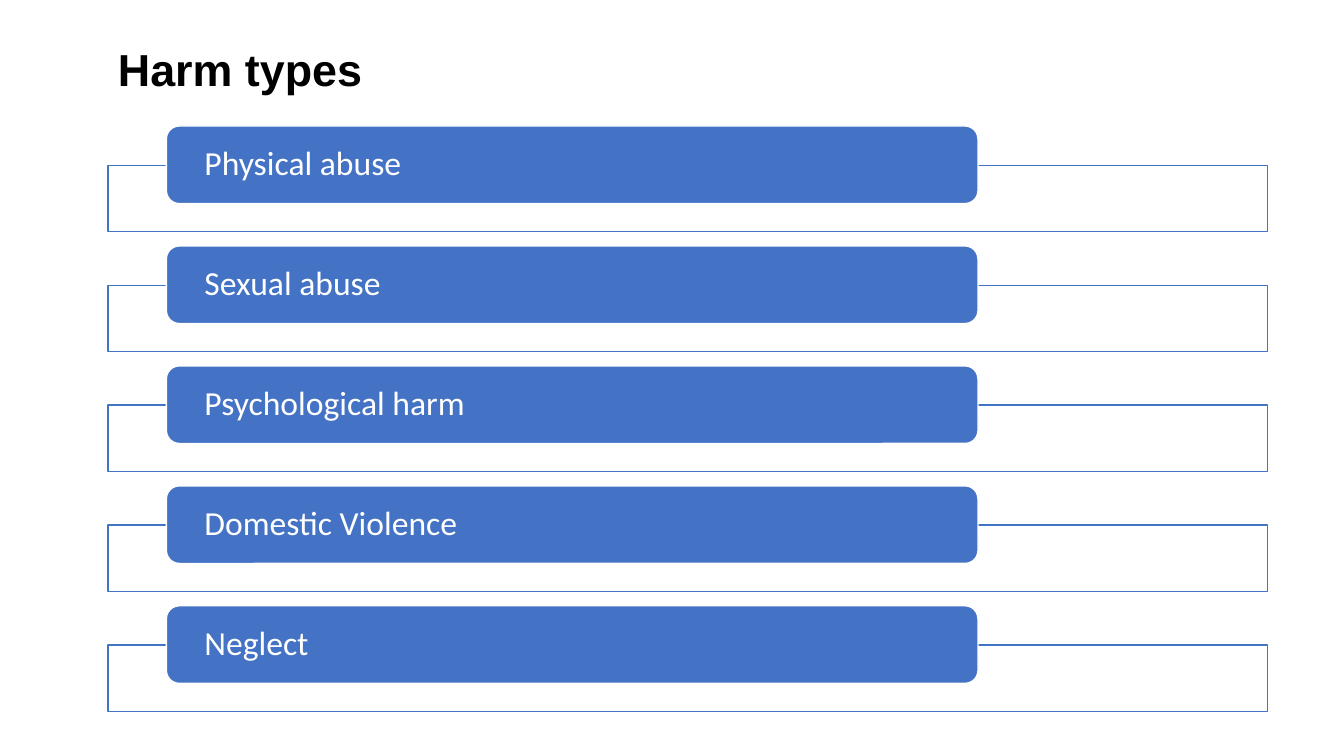
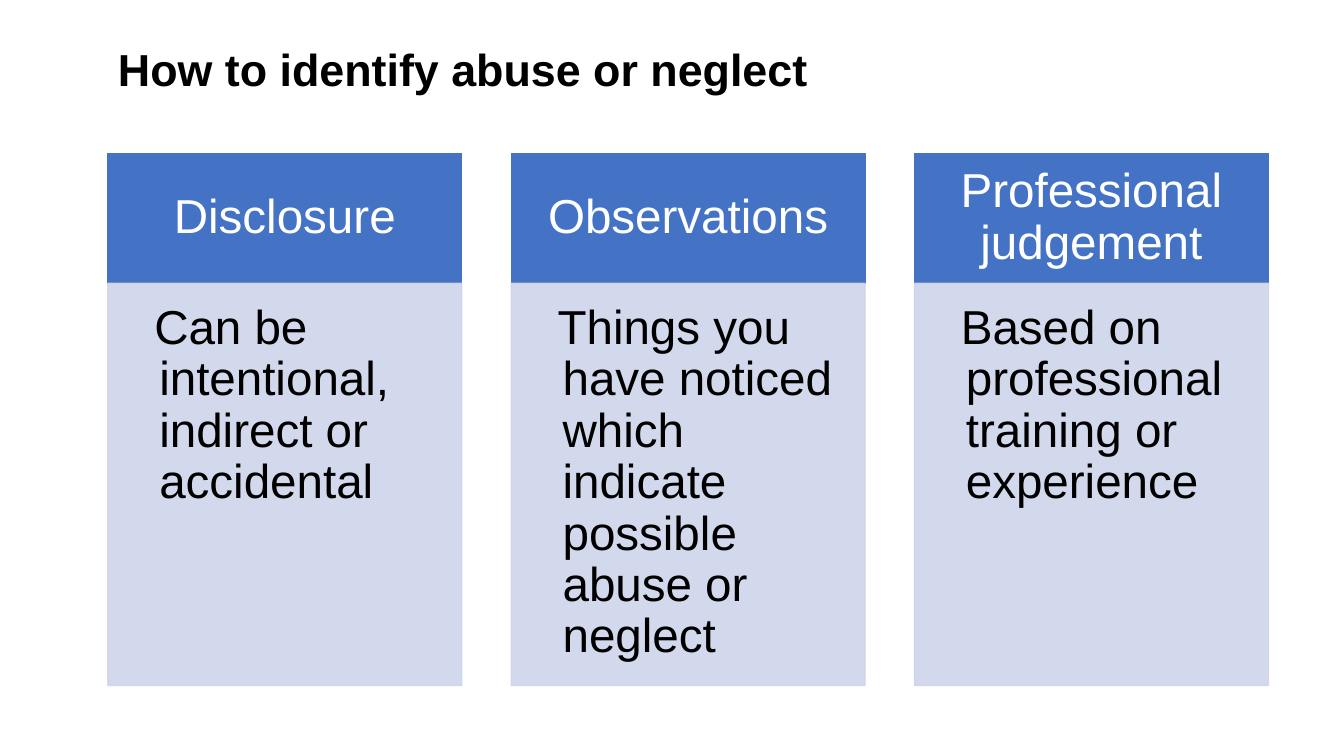
"""Build two slides on types of harm and on identifying abuse or neglect."""
import pptx
import pptx.dml.color
import pptx.enum.shapes
import pptx.enum.text
import pptx.oxml
import pptx.util

PX = 9144
BLUE, LILAC, WHITE, BLACK = "4472C4", "CFD5EA", "FFFFFF", "000000"
SHAPES = pptx.enum.shapes.MSO_SHAPE
ALIGN = pptx.enum.text.PP_ALIGN
ANCHOR = pptx.enum.text.MSO_ANCHOR
rgb = pptx.dml.color.RGBColor.from_string

TITLE = {"size": 32, "name": "Arial", "color": BLACK, "bold": True}
HARM = {"size": 24, "name": "Calibri", "color": WHITE, "bold": False}
HEADING = {"size": 34, "name": "Arial", "color": WHITE, "bold": False}
DETAIL = {**HEADING, "color": BLACK}


def write(shape, text, style, align, anchor, insets):
    frame = shape.text_frame
    sides = ("margin_left", "margin_top", "margin_right", "margin_bottom")
    layout = {"word_wrap": True, "vertical_anchor": anchor,
              "auto_size": pptx.enum.text.MSO_AUTO_SIZE.NONE,
              **{side: inset * PX for side, inset in zip(sides, insets)}}
    for attribute, value in layout.items():
        setattr(frame, attribute, value)
    paragraph = frame.paragraphs[0]
    paragraph.text = text
    paragraph.alignment = align
    paragraph.line_spacing = 0.9
    font = paragraph.runs[0].font
    values = {"size": pptx.util.Pt(style["size"]), "name": style["name"], "bold": style["bold"]}
    for attribute, value in values.items():
        setattr(font, attribute, value)
    font.color.rgb = rgb(style["color"])
    return paragraph


def panel(slide, kind, box, fill, line):
    shape = slide.shapes.add_shape(kind, *(length * PX for length in box))
    shape.shadow.inherit = False
    shape.fill.solid()
    shape.fill.fore_color.rgb = rgb(fill)
    shape.line.color.rgb = rgb(line)
    shape.line.width = pptx.util.Pt(1)
    return shape


deck = pptx.Presentation()
deck.slide_width, deck.slide_height = 1333 * PX, 750 * PX

slides = []
for heading in ("Harm types", "How to identify abuse or neglect"):
    slide = deck.slides.add_slide(deck.slide_layouts[5])
    title = slide.shapes.title
    for attribute, length in {"left": 107, "top": 40, "width": 1150, "height": 63}.items():
        setattr(title, attribute, length * PX)
    write(title, heading, TITLE, ALIGN.LEFT, ANCHOR.MIDDLE, (10, 5, 10, 5))
    slides.append(slide)
harm_slide, identify_slide = slides

harms = ("Physical abuse", "Sexual abuse", "Psychological harm", "Domestic Violence", "Neglect")
for row, harm in enumerate(harms):
    top = 125 + 119 * row
    panel(harm_slide, SHAPES.RECTANGLE, (107, top + 39, 1150, 66), WHITE, BLUE)
    bar = panel(harm_slide, SHAPES.ROUNDED_RECTANGLE, (165, top, 805, 77), BLUE, WHITE)
    write(bar, harm, HARM, ALIGN.LEFT, ANCHOR.MIDDLE, (34, 4, 34, 4))

signs = (
    ("Disclosure", "Can be intentional, indirect or accidental"),
    ("Observations", "Things you have noticed which indicate possible abuse or neglect"),
    ("Professional judgement", "Based on professional training or experience"),
)
for column, (sign, detail) in enumerate(signs):
    left = 107 + 400 * column
    header = panel(identify_slide, SHAPES.RECTANGLE, (left, 152, 351, 129), BLUE, BLUE)
    write(header, sign, HEADING, ALIGN.CENTER, ANCHOR.MIDDLE, (26, 15, 26, 15))
    body = panel(identify_slide, SHAPES.RECTANGLE, (left, 281, 351, 399), LILAC, LILAC)
    for color in body._element.spPr.iter(pptx.oxml.ns.qn("a:srgbClr")):
        alpha = color.makeelement(pptx.oxml.ns.qn("a:alpha"), {"val": "90000"})
        color.append(alpha)
    paragraph = write(body, detail, DETAIL, ALIGN.LEFT, ANCHOR.TOP, (20, 20, 26, 30))
    properties = paragraph._p.get_or_add_pPr()
    for attribute, length in {"marL": 31, "indent": -5}.items():
        properties.set(attribute, str(length * PX))

deck.save("out.pptx")
